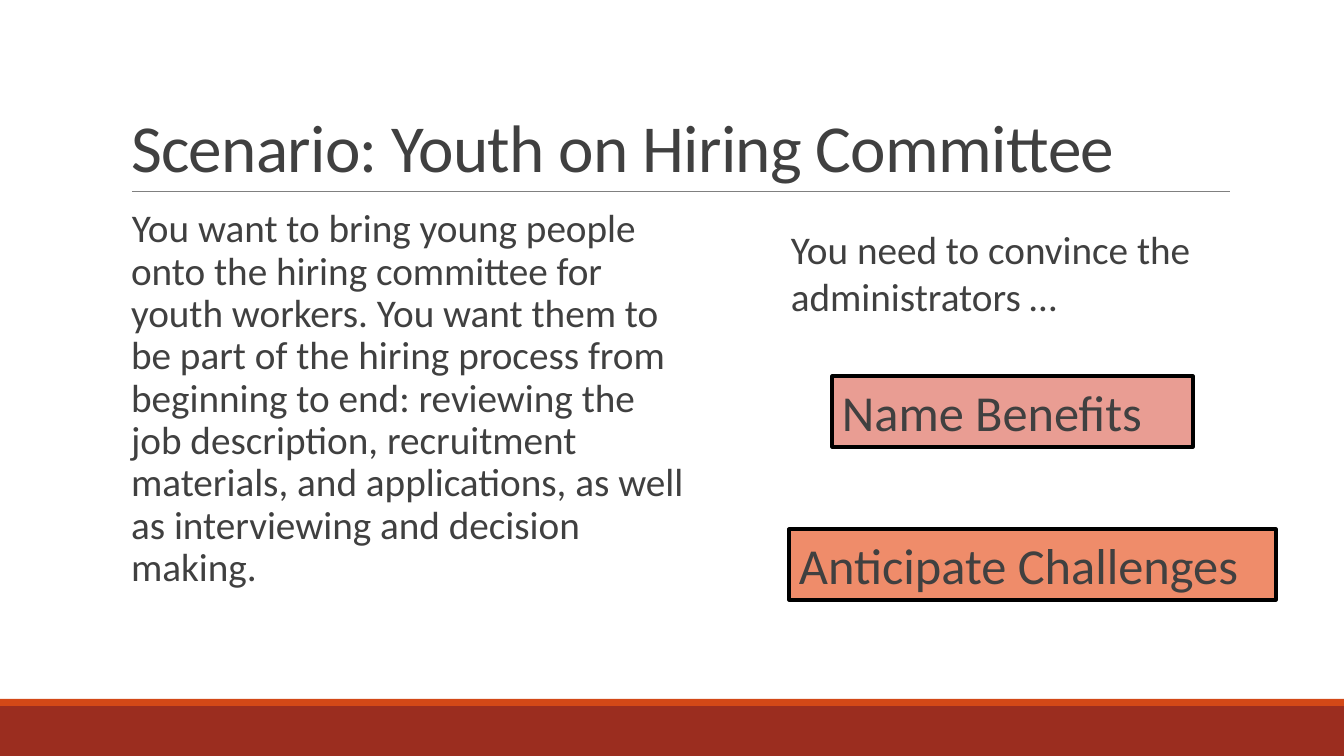
from pptx import Presentation, util as u
from pptx.dml.color import RGBColor
from pptx.enum import shapes, text
from pptx.oxml import parse_xml
from pptx.oxml.ns import nsdecls

PX = 914400 / 100.8  # EMU in one px
DARK_RED = RGBColor(0x9B, 0x2D, 0x1F)
ORANGE = RGBColor(0xD3, 0x48, 0x17)
GREY = RGBColor(0x80, 0x80, 0x80)
INK = RGBColor(0x40, 0x40, 0x40)
BLACK = RGBColor(0, 0, 0)
PINK = RGBColor(0xE9, 0x9D, 0x93)
PEACH = RGBColor(0xEF, 0x8C, 0x6A)


def emu(*lengths):
    return [u.Emu(round(n * PX)) for n in lengths]


def write(sp, words, size, anchor=text.MSO_ANCHOR.TOP, spacing=1.0,
          before=0, after=0, grow=False):
    tf = sp.text_frame
    tf.word_wrap = True
    tf.auto_size = (text.MSO_AUTO_SIZE.SHAPE_TO_FIT_TEXT if grow
                    else text.MSO_AUTO_SIZE.NONE)
    tf.vertical_anchor = anchor
    p = tf.paragraphs[0]
    p.alignment = text.PP_ALIGN.LEFT
    p.line_spacing = spacing
    p.space_before, p.space_after = u.Pt(before), u.Pt(after)
    r = p.add_run()
    r.text = words
    r.font.size, r.font.name, r.font.color.rgb = u.Pt(size), "Calibri", INK
    return p, r


prs = Presentation()
prs.slide_width, prs.slide_height = emu(1344, 756)
s = prs.slides.add_slide(prs.slide_layouts[1])
title, body = s.placeholders

# Footer bands
for top, height, color in ((706, 50, DARK_RED), (699, 7, ORANGE)):
    sp = s.shapes.add_shape(shapes.MSO_SHAPE.RECTANGLE, *emu(0, top, 1344, height))
    sp.shadow.inherit = False
    sp.fill.solid()
    sp.fill.fore_color.rgb = color
    sp.line.fill.background()

# Rule under the title
rule = s.shapes.add_connector(shapes.MSO_CONNECTOR.STRAIGHT, *emu(132, 191, 1230, 191))
rule.line.color.rgb = GREY
rule.line.width = u.Pt(0.5)
rule._element.spPr.append(parse_xml(f"<a:effectLst {nsdecls('a')}/>"))

# Title
title.left, title.top, title.width, title.height = emu(121, 31, 1109, 160)
p, r = write(title, "Scenario: Youth on Hiring Committee", 48,
             anchor=text.MSO_ANCHOR.BOTTOM, spacing=0.85)
r.font._element.set("spc", "-50")

# Scenario, with a blank bullet
body.left, body.top, body.width, body.height = emu(121, 204, 568, 443)
body.text_frame.margin_left = body.text_frame.margin_right = 0
p, r = write(body, "You want to bring young people onto the hiring committee for "
             "youth workers. You want them to be part of the hiring process from "
             "beginning to end: reviewing the job description, recruitment "
             "materials, and applications, as well as interviewing and decision "
             "making.", 28, spacing=0.9, before=12, after=2)
pPr = p._p.get_or_add_pPr()
pPr.set("marL", "91440")
pPr.set("indent", "-91440")
pPr.append(parse_xml(f'<a:buClr {nsdecls("a")}><a:srgbClr val="{ORANGE}"/></a:buClr>'))
pPr.append(parse_xml(f'<a:buChar {nsdecls("a")} char=" "/>'))

# Task boxes
for words, left, top, width, color in (
        ("Anticipate Challenges", 789, 529, 487, PEACH),
        ("Name Benefits", 832, 376, 361, PINK)):
    sp = s.shapes.add_shape(shapes.MSO_SHAPE.RECTANGLE, *emu(left, top, width, 71))
    sp.shadow.inherit = False
    sp.fill.solid()
    sp.fill.fore_color.rgb = color
    sp.line.color.rgb = BLACK
    sp.line.width = u.Pt(2.25)
    write(sp, words, 36, grow=True)

# Prompt above the boxes
prompt = s.shapes.add_textbox(*emu(781, 220, 496, 105))
write(prompt, "You need to convince the administrators …", 28, grow=True)

prs.save("out.pptx")
